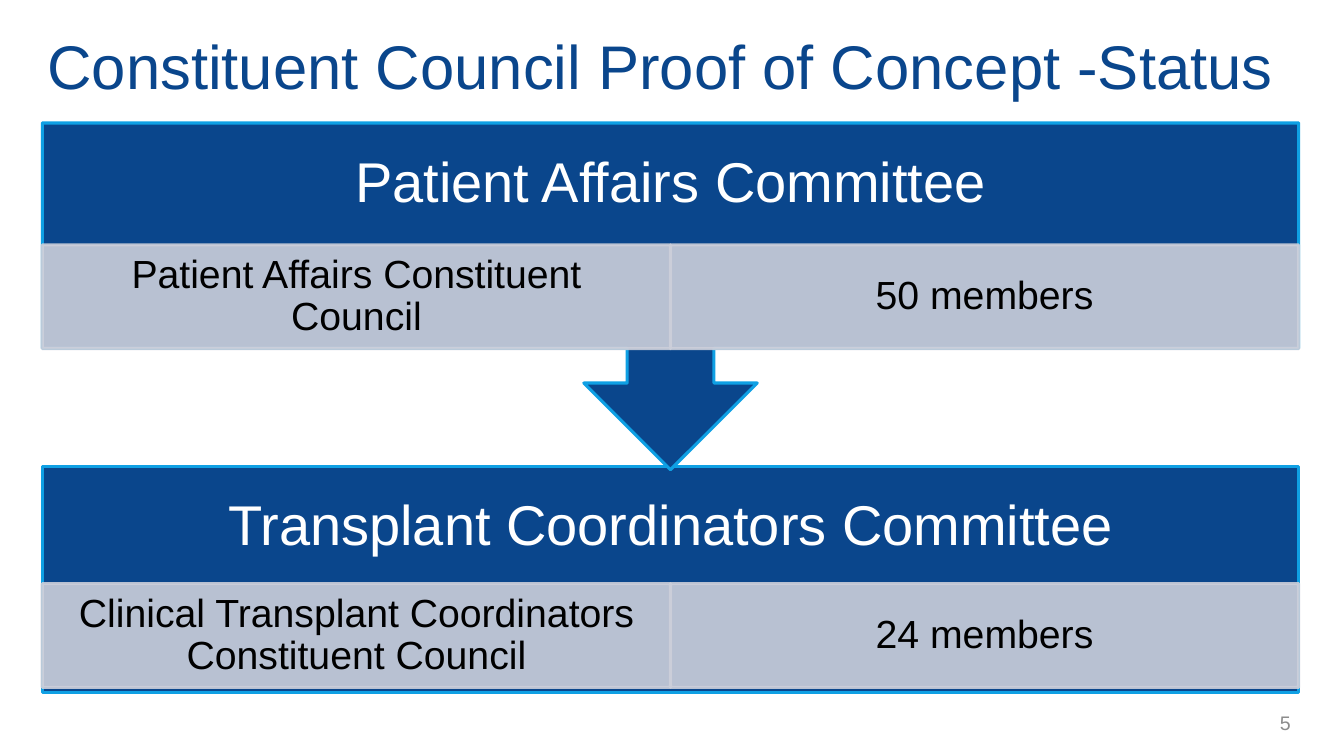
import dataclasses

import lxml.etree
import pptx
import pptx.dml.color
import pptx.enum.shapes
import pptx.enum.text
import pptx.oxml.ns
import pptx.util

Inches = pptx.util.Inches
Shape = pptx.enum.shapes.MSO_SHAPE
Align = pptx.enum.text.PP_ALIGN

NAVY = "0A468C"
SKY = "0FA0E4"
PALE = "CCCFDA"
LEFT = 0.42
WIDTH = 12.46
HEADER_HEIGHT = 1.21
CELL_HEIGHT = 1.03


@dataclasses.dataclass
class Committee:
    name: str
    cells: list[str]
    top: float
    height: float
    cells_top: float
    outline: pptx.enum.shapes.MSO_SHAPE
    rotation: int


COMMITTEES = [
    Committee("Transplant Coordinators Committee",
              ["Clinical Transplant Coordinators Constituent Council", "24 members"],
              4.63, 2.24, 5.79, Shape.RECTANGLE, 0),
    Committee("Patient Affairs Committee",
              ["Patient Affairs Constituent Council", "50 members"],
              1.22, 3.44, 2.43, Shape.UP_ARROW_CALLOUT, 180),
]


def color(value: str) -> pptx.dml.color.RGBColor:
    return pptx.dml.color.RGBColor.from_string(value)


def box(left: float, top: float, width: float, height: float) -> list[int]:
    return [Inches(length) for length in (left, top, width, height)]


def write(shape, text: str, size: int, ink: str, alignment,
          inset_x: float = 0.1, inset_y: float = 0.05, spacing: float = 1.0) -> None:
    frame = shape.text_frame
    frame.word_wrap = True
    frame.auto_size = pptx.enum.text.MSO_AUTO_SIZE.NONE
    frame.vertical_anchor = pptx.enum.text.MSO_ANCHOR.MIDDLE
    frame.margin_left = frame.margin_right = Inches(inset_x)
    frame.margin_top = frame.margin_bottom = Inches(inset_y)
    paragraph = frame.paragraphs[0]
    paragraph.alignment = alignment
    paragraph.line_spacing = spacing
    run = paragraph.add_run()
    run.text = text
    run.font.name = "Arial"
    run.font.size = pptx.util.Pt(size)
    run.font.color.rgb = color(ink)


def add_panel(slide, outline, place: list[int], fill: str, line: str, opacity: int = 100):
    shape = slide.shapes.add_shape(outline, *place)
    shape.shadow.inherit = False
    shape.fill.solid()
    shape.fill.fore_color.rgb = color(fill)
    shape.line.color.rgb = color(line)
    shape.line.width = pptx.util.Pt(2.25)
    if opacity < 100:
        for paint in shape.element.spPr.iter(pptx.oxml.ns.qn("a:srgbClr")):
            alpha = lxml.etree.SubElement(paint, pptx.oxml.ns.qn("a:alpha"))
            alpha.set("val", str(opacity * 1000))
    return shape


def add_committee(slide, committee: Committee) -> None:
    panel = add_panel(slide, committee.outline,
                      box(LEFT, committee.top, WIDTH, committee.height), NAVY, SKY)
    panel.rotation = committee.rotation
    header = slide.shapes.add_textbox(*box(LEFT, committee.top, WIDTH, HEADER_HEIGHT))
    write(header, committee.name, 40, "FFFFFF", Align.CENTER, 0.31, 0.31, 0.9)
    cell_width = WIDTH / len(committee.cells)
    for column, text in enumerate(committee.cells):
        place = box(LEFT + column * cell_width, committee.cells_top, cell_width, CELL_HEIGHT)
        cell = add_panel(slide, Shape.RECTANGLE, place, PALE, PALE, 90)
        write(cell, text, 28, "000000", Align.CENTER, 0.22, 0.04, 0.9)


def main() -> None:
    presentation = pptx.Presentation()
    presentation.slide_width = Inches(13.33)
    presentation.slide_height = Inches(7.5)
    slide = presentation.slides.add_slide(presentation.slide_layouts[5])

    title = slide.shapes.title
    title.left, title.top, title.width, title.height = box(0.37, 0.17, 12.74, 0.94)
    write(title, "Constituent Council Proof of Concept -Status", 44, NAVY, Align.LEFT)

    for committee in COMMITTEES:
        add_committee(slide, committee)

    page_number = slide.shapes.add_textbox(*box(10.64, 6.97, 2.26, 0.4))
    write(page_number, "5", 14, "8C8C8C", Align.RIGHT)
    presentation.save("out.pptx")


if __name__ == "__main__":
    main()
